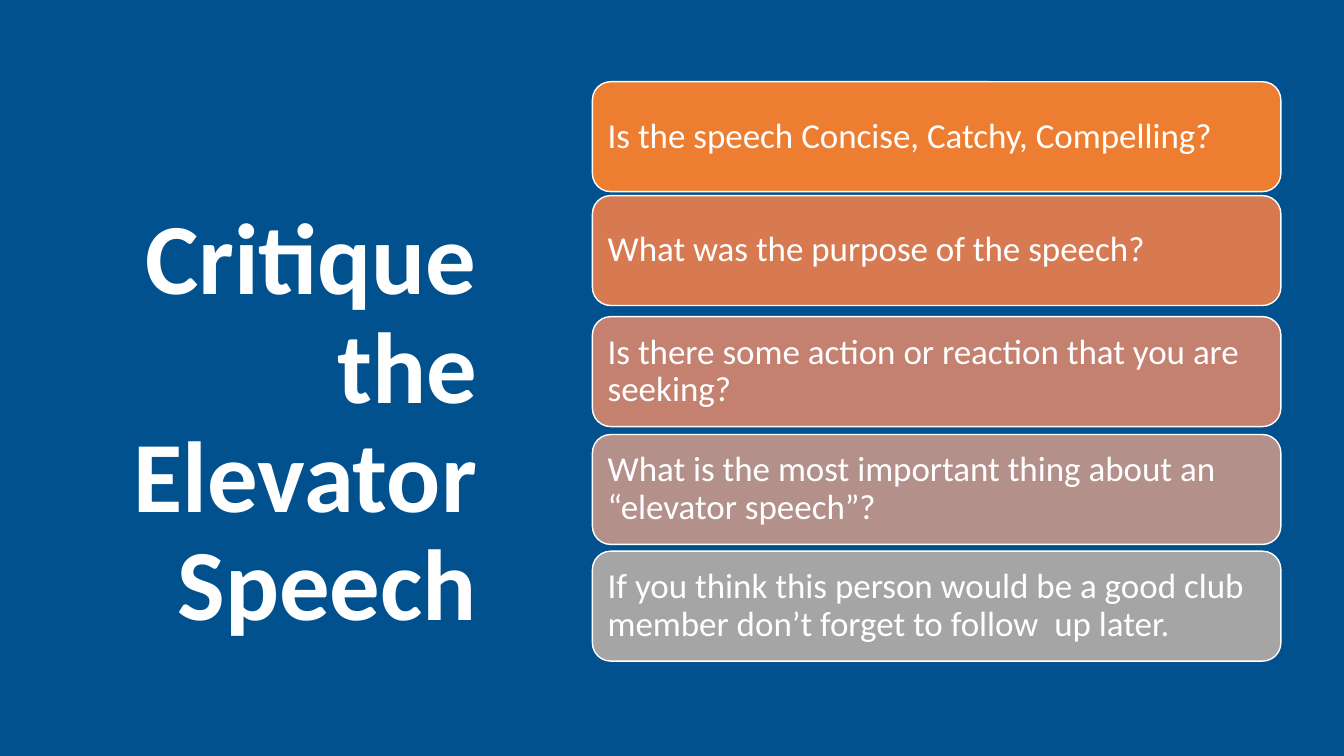
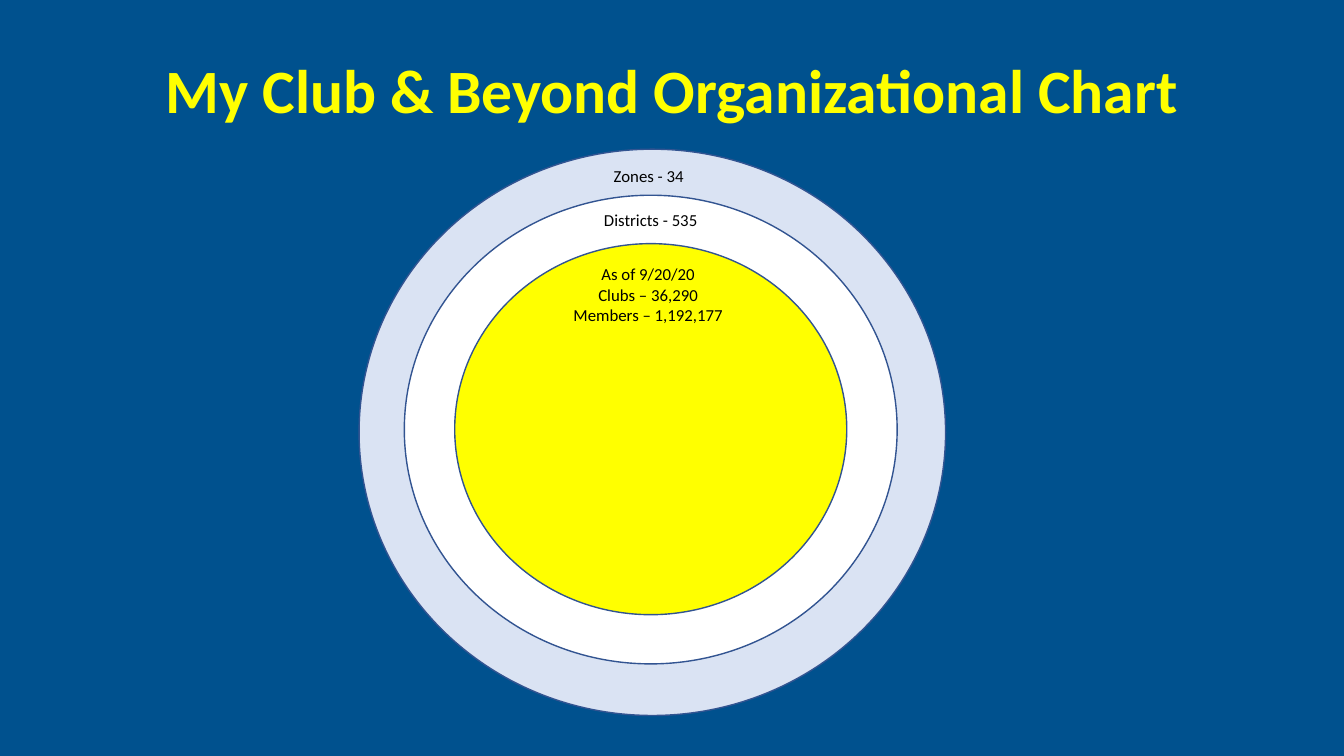
import pptx
import pptx.util
import pptx.dml.color
import pptx.enum.shapes
import pptx.enum.text

Cm = pptx.util.Cm
Pt = pptx.util.Pt
Kind = pptx.enum.shapes.MSO_SHAPE
Align = pptx.enum.text.PP_ALIGN
Anchor = pptx.enum.text.MSO_ANCHOR

# Shared look
FONT = "Calibri"
NAVY, WHITE, BLACK, YELLOW = "00518E", "FFFFFF", "000000", "FFFF00"
PALE, EDGE = "DAE3F3", "325491"


def paint(item, color):
    """Give a fill, line fill or background fill one solid colour."""
    item.solid()
    item.fore_color.rgb = pptx.dml.color.RGBColor.from_string(color)


def write(shape, text, size, color, align, bold=False, space=0.9, anchor=Anchor.MIDDLE):
    """Set the text of a shape and format every paragraph alike."""
    frame = shape.text_frame
    frame.text = text
    frame.word_wrap = True
    frame.vertical_anchor = anchor
    for para in frame.paragraphs:
        para.alignment = align
        para.line_spacing = space
        for run in para.runs:
            run.font.name = FONT
            run.font.size = Pt(size)
            run.font.bold = bold
            paint(run.font.fill, color)


deck = pptx.Presentation()
deck.slide_width = Cm(33.87)
deck.slide_height = Cm(19.05)

# Both slides: background and title
titles = [
    ("Critique the Elevator Speech", (1.32, 2.95, 10.95, 15.52), 72, WHITE, Align.RIGHT),
    ("My Club & Beyond Organizational Chart", (2.34, 1.02, 29.21, 2.67), 44, YELLOW, Align.CENTER),
]
slides = []
for text, place, size, color, align in titles:
    slide = deck.slides.add_slide(deck.slide_layouts[6])
    paint(slide.background.fill, NAVY)
    box = slide.shapes.add_textbox(*map(Cm, place))
    write(box, text, size, color, align, bold=True)
    slides.append(slide)
speech, chart = slides

# Slide 1: question cards
cards = [
    (2.06, "ED7D31", "Is the speech Concise, Catchy, Compelling?"),
    (4.93, "D87A51", "What was the purpose of the speech?"),
    (7.98, "C48170", "Is there some action or reaction that you are seeking?"),
    (10.95, "B4908B", "What is the most important thing about an “elevator speech”?"),
    (13.89, "A5A5A5", "If you think this person would be a good club member don’t forget to follow  up later."),
]
for top, color, text in cards:
    card = speech.shapes.add_shape(Kind.ROUNDED_RECTANGLE, Cm(14.93), Cm(top), Cm(17.35), Cm(2.77))
    card.shadow.inherit = False
    paint(card.fill, color)
    paint(card.line.fill, WHITE)
    card.line.width = Pt(1)
    write(card, text, 25, WHITE, Align.LEFT)

# Slide 2: nested rings, from the outside in
rings = [
    (PALE, (9.05, 3.76, 14.78, 14.27)),
    (WHITE, (10.19, 4.92, 12.42, 11.81)),
    (YELLOW, (11.46, 6.14, 9.88, 9.35)),
]
for color, place in rings:
    ring = chart.shapes.add_shape(Kind.OVAL, *map(Cm, place))
    ring.shadow.inherit = False
    paint(ring.fill, color)
    paint(ring.line.fill, EDGE)
    ring.line.width = Pt(1)

# Slide 2: ring labels
labels = [
    ("Zones - 34", (14.76, 4.11, 3.18, 0.71), 0.9),
    ("Districts - 535", (14.81, 5.23, 3.18, 0.71), 0.9),
    ("As of 9/20/20\nClubs – 36,290\nMembers – 1,192,177", (14.15, 6.53, 4.37, 1.8), 1.0),
]
for text, place, space in labels:
    label = chart.shapes.add_textbox(*map(Cm, place))
    write(label, text, 12, BLACK, Align.CENTER, space=space, anchor=Anchor.TOP)

deck.save("out.pptx")
